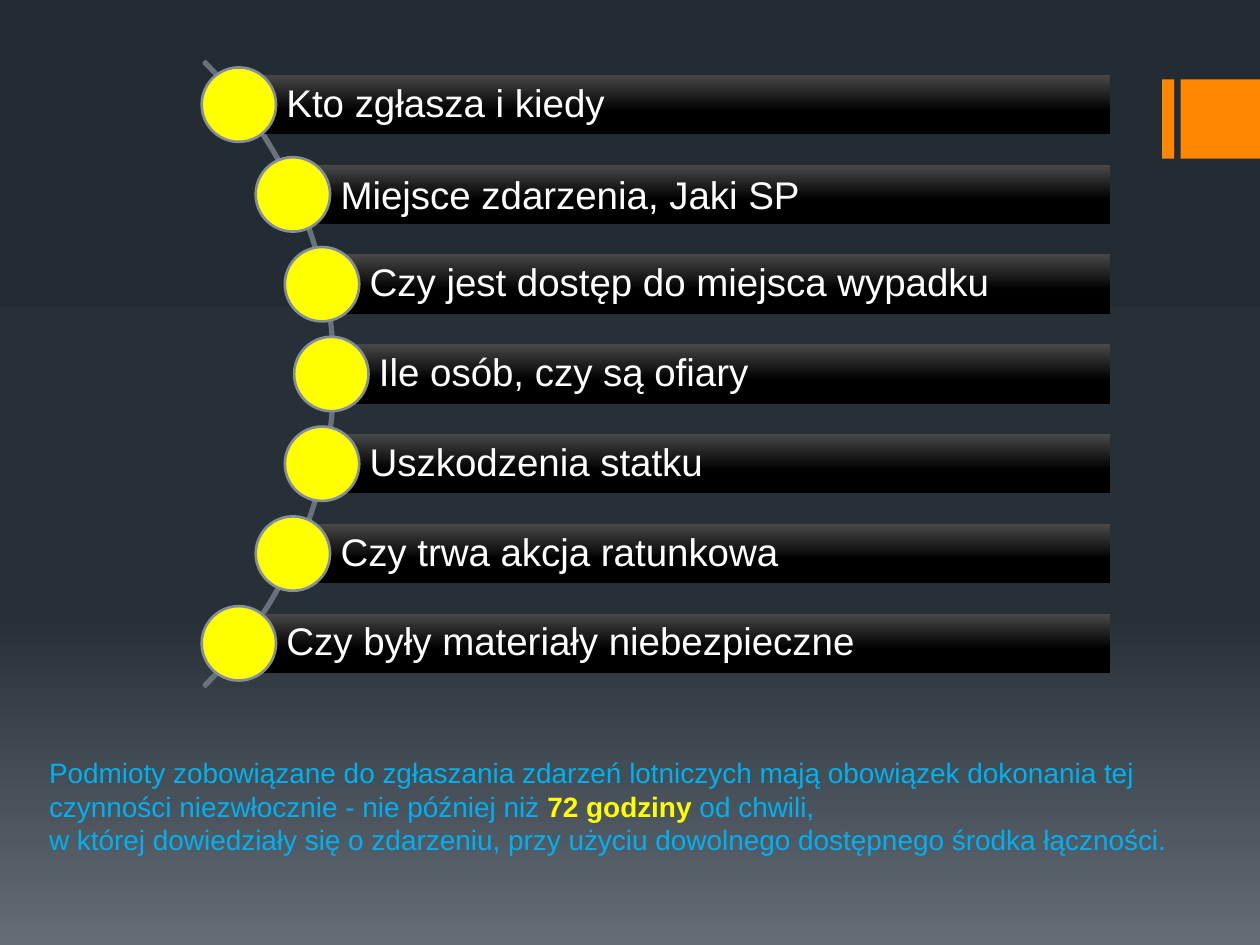
from lxml.etree import SubElement
from pptx import Presentation
from pptx.dml.color import RGBColor
from pptx.enum.shapes import MSO_SHAPE as Shape
from pptx.enum.text import MSO_ANCHOR as Anchor, PP_ALIGN as Align
from pptx.oxml.ns import qn
from pptx.util import Cm, Pt

# Content: question and line spacing
QUESTIONS = [
    ("Kto zgłasza i kiedy", 0.9),
    ("Miejsce zdarzenia, Jaki SP", 1.0),
    ("Czy jest dostęp do miejsca wypadku", 0.9),
    ("Ile osób, czy są ofiary", 0.9),
    ("Uszkodzenia statku", 0.9),
    ("Czy trwa akcja ratunkowa", 0.9),
    ("Czy były materiały niebezpieczne", 0.9),
]
NOTE_START = ("Podmioty zobowiązane do zgłaszania zdarzeń lotniczych mają obowiązek "
              "dokonania tej czynności niezwłocznie - nie później niż ")
NOTE_DEADLINE = "72 godziny "
NOTE_MIDDLE = "od chwili, "
NOTE_END = ("w której dowiedziały się o zdarzeniu, przy użyciu dowolnego "
            "dostępnego środka łączności.")

# Colours
ORANGE = RGBColor(0xFF, 0x86, 0x00)
YELLOW = RGBColor(0xFF, 0xFF, 0x00)
WHITE = RGBColor(0xFF, 0xFF, 0xFF)
BLUE = RGBColor(0x00, 0xB0, 0xF0)
ARC_GREY = RGBColor(0x69, 0x71, 0x7C)
RING_GREY = RGBColor(0x83, 0x8D, 0x9B)
BLACK = RGBColor(0x00, 0x00, 0x00)
PAGE_STOPS = [(0, RGBColor(0x24, 0x2C, 0x33)), (65, RGBColor(0x27, 0x30, 0x37)),
              (100, RGBColor(0x63, 0x6D, 0x76))]
BAR_STOPS = [(0, RGBColor(0x48, 0x48, 0x48)), (60, BLACK), (100, BLACK)]

# Geometry in centimetres: the circles sit on an arc
ARC_X, ARC_Y, ARC_SIZE = -2.16, 7.54, 17.83
TRACK_RADIUS = 8.84
ROW_PITCH = 1.81
BAR_HEIGHT, BAR_RIGHT = 1.2, 22.38
CIRCLE = 1.5


def fill_gradient(fill, element, stops):
    """Give a top-to-bottom gradient with any number of stops."""
    fill.gradient()
    fill.gradient_angle = 270
    stop_list = next(element.iter(qn("a:gsLst")))
    for old in list(stop_list):
        stop_list.remove(old)
    for percent, colour in stops:
        stop = SubElement(stop_list, qn("a:gs"), pos=str(percent * 1000))
        SubElement(stop, qn("a:srgbClr"), val=str(colour))


def add_shape(kind, left, top, width, height, fill=None, line=None):
    shape = page.shapes.add_shape(kind, Cm(left), Cm(top), Cm(width), Cm(height))
    shape.shadow.inherit = False
    if fill is None:
        shape.fill.background()
    else:
        shape.fill.solid()
        shape.fill.fore_color.rgb = fill
    if line is None:
        shape.line.fill.background()
    else:
        shape.line.color.rgb = line
        shape.line.width = Pt(1.5)
    return shape


def set_font(font, size, colour):
    font.name = "Arial"
    font.size = Pt(size)
    font.color.rgb = colour


def add_question(text, spacing, center_x, center_y):
    bar = add_shape(Shape.RECTANGLE, center_x, center_y - BAR_HEIGHT / 2,
                    BAR_RIGHT - center_x, BAR_HEIGHT)
    fill_gradient(bar.fill, bar._element, BAR_STOPS)
    frame = bar.text_frame
    frame.word_wrap = True
    frame.vertical_anchor = Anchor.MIDDLE
    frame.margin_left = Cm(0.96)
    frame.margin_top = frame.margin_right = frame.margin_bottom = Cm(0.15)
    para = frame.paragraphs[0]
    para.text = text
    para.alignment = Align.LEFT
    para.line_spacing = spacing
    set_font(para.font, 22, WHITE)
    add_shape(Shape.OVAL, center_x - CIRCLE / 2, center_y - CIRCLE / 2,
              CIRCLE, CIRCLE, YELLOW, RING_GREY)


deck = Presentation()
deck.slide_width, deck.slide_height = Cm(25.4), Cm(19.05)
page = deck.slides.add_slide(deck.slide_layouts[6])
fill_gradient(page.background.fill, page._element, PAGE_STOPS)

# Orange marks at the right edge
for left, width in [(23.43, 0.24), (23.8, 1.6)]:
    add_shape(Shape.RECTANGLE, left, 1.6, width, 1.6, ORANGE)

# Arc behind the list
arc = add_shape(Shape.BLOCK_ARC, ARC_X - ARC_SIZE / 2, ARC_Y - ARC_SIZE / 2,
                ARC_SIZE, ARC_SIZE, line=ARC_GREY)
for index, value in enumerate([189, 27, 0.003]):
    arc.adjustments[index] = value

# Questions along the arc
for row, (text, spacing) in enumerate(QUESTIONS):
    offset = (row - (len(QUESTIONS) - 1) / 2) * ROW_PITCH
    center_x = ARC_X + (TRACK_RADIUS ** 2 - offset ** 2) ** 0.5
    add_question(text, spacing, center_x, ARC_Y + offset)

# Note on the reporting deadline
box = page.shapes.add_textbox(Cm(0.74), Cm(15.11), Cm(24.61), Cm(2.31))
box.text_frame.word_wrap = True
para = box.text_frame.paragraphs[0]
set_font(para.font, 16, BLUE)
para.add_run().text = NOTE_START
deadline = para.add_run()
deadline.text = NOTE_DEADLINE
deadline.font.bold = True
deadline.font.color.rgb = YELLOW
para.add_run().text = NOTE_MIDDLE
para.add_line_break()
para.add_run().text = NOTE_END

deck.save("out.pptx")
